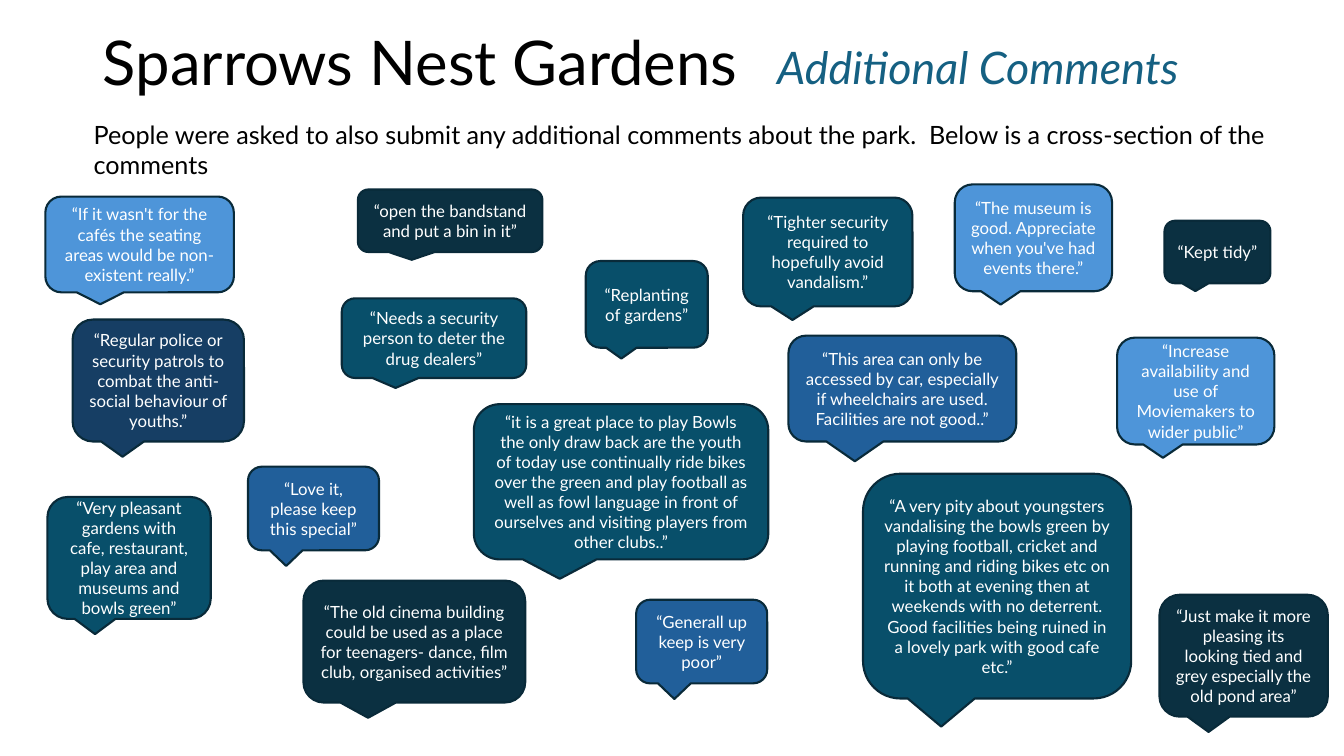
"""Build the Sparrows Nest Gardens slide of visitor comments."""
from pptx import Presentation
from pptx.dml.color import RGBColor
from pptx.enum.shapes import MSO_SHAPE
from pptx.enum.text import MSO_ANCHOR, MSO_AUTO_SIZE, PP_ALIGN
from pptx.util import Inches, Pt

COLOURS = {
    "black": "000000", "white": "FFFFFF", "accent": "156082", "outline": "092A39",
    "sky": "4E95D9", "blue": "215F9A", "navy": "163E64", "teal": "084F6A", "ink": "0B3041",
}
SHORT_TAIL, LONG_TAIL = 0.625, 0.687

COMMENTS = [
    (0.45, 1.95, 1.87, 0.95, "sky", SHORT_TAIL,
     "“If it wasn't for the cafés the seating areas would be non-existent really.”"),
    (0.72, 3.17, 1.7, 1.21, "navy", SHORT_TAIL,
     "“Regular police or security patrols to combat the anti-social behaviour of youths.”"),
    (3.55, 1.88, 1.83, 0.62, "ink", SHORT_TAIL, "“open the bandstand and put a bin in it”"),
    (7.37, 1.96, 1.68, 1.08, "teal", SHORT_TAIL,
     "“Tighter security required to hopefully avoid vandalism.”"),
    (9.47, 1.83, 1.56, 1.06, "sky", SHORT_TAIL,
     "“The museum is good. Appreciate when you've had events there.”"),
    (4.7, 4.01, 2.92, 1.54, "teal", SHORT_TAIL,
     "“it is a great place to play Bowls the only draw back are the youth of today use "
     "continually ride bikes over the green and play football as well as fowl language "
     "in front of ourselves and visiting players from other clubs..”"),
    (3.01, 5.76, 2.2, 1.21, "ink", SHORT_TAIL,
     "“The old cinema building could be used as a place for teenagers- dance, film club, "
     "organised activities”"),
    (2.46, 4.63, 1.3, 0.83, "blue", LONG_TAIL, "“Love it, please keep this special”"),
    (5.81, 2.59, 1.21, 0.86, "teal", SHORT_TAIL, "“Replanting of gardens”"),
    (0.47, 4.93, 1.62, 1.21, "teal", SHORT_TAIL,
     "“Very pleasant gardens with cafe, restaurant, play area and museums and bowls green”"),
    (3.39, 2.96, 1.83, 0.79, "teal", SHORT_TAIL,
     "“Needs a security person to deter the drug dealers”"),
    (7.82, 3.33, 2.26, 1.05, "blue", LONG_TAIL,
     "“This area can only be accessed by car, especially if wheelchairs are used. "
     "Facilities are not good..”"),
    (6.31, 5.95, 1.3, 0.83, "blue", LONG_TAIL, "“Generall up keep is very poor”"),
    (8.56, 4.7, 2.66, 2.23, "teal", SHORT_TAIL,
     "“A very pity about youngsters vandalising the bowls green by playing football, "
     "cricket and running and riding bikes etc on it both at evening then at weekends "
     "with no deterrent. Good facilities being ruined in a lovely park with good cafe etc.”"),
    (11.55, 2.19, 1.05, 0.62, "ink", SHORT_TAIL, "“Kept tidy”"),
    (11.08, 3.35, 1.56, 1.06, "sky", SHORT_TAIL,
     "“Increase availability and use of Moviemakers to wider public”"),
    (11.5, 5.9, 1.67, 1.21, "ink", SHORT_TAIL,
     "“Just make it more pleasing its looking tied and grey especially the old pond area”"),
]


def colour(name):
    return RGBColor.from_string(COLOURS[name])


def write(box, text, size, tint, align=PP_ALIGN.LEFT, italic=False):
    box.text_frame.word_wrap = True
    para = box.text_frame.paragraphs[0]
    para.alignment = align
    span = para.add_run()
    span.text = text
    span.font.name = "Lato"
    span.font.size = Pt(size)
    span.font.italic = italic
    span.font.color.rgb = colour(tint)
    return para


deck = Presentation()
deck.slide_width, deck.slide_height = Inches(13.33), Inches(7.5)
page = deck.slides.add_slide(deck.slide_layouts[5])

title = page.shapes.title
title.left, title.top = Inches(0.92), Inches(-0.07)
title.width, title.height = Inches(11.5), Inches(1.45)
title.text_frame.auto_size = MSO_AUTO_SIZE.NONE
title.text_frame.vertical_anchor = MSO_ANCHOR.MIDDLE
write(title, "Sparrows Nest Gardens", 44, "black").line_spacing = 0.9

subtitle = page.shapes.add_textbox(Inches(7.61), Inches(0.34), Inches(5.48), Inches(0.64))
write(subtitle, "Additional Comments", 32, "accent", italic=True)

intro = page.shapes.add_textbox(Inches(0.83), Inches(1.13), Inches(12.04), Inches(0.71))
write(intro, "People were asked to also submit any additional comments about the park.  "
      "Below is a cross-section of the comments", 18, "black")

for left, top, width, height, fill, tail, comment in COMMENTS:
    bubble = page.shapes.add_shape(MSO_SHAPE.ROUNDED_RECTANGULAR_CALLOUT, Inches(left),
                                   Inches(top), Inches(width), Inches(height))
    bubble.adjustments[1] = tail
    bubble.shadow.inherit = False
    bubble.fill.solid()
    bubble.fill.fore_color.rgb = colour(fill)
    bubble.line.color.rgb = colour("outline")
    bubble.line.width = Pt(1.5)
    bubble.text_frame.vertical_anchor = MSO_ANCHOR.MIDDLE
    write(bubble, comment, 12, "white", PP_ALIGN.CENTER)

deck.save("out.pptx")
